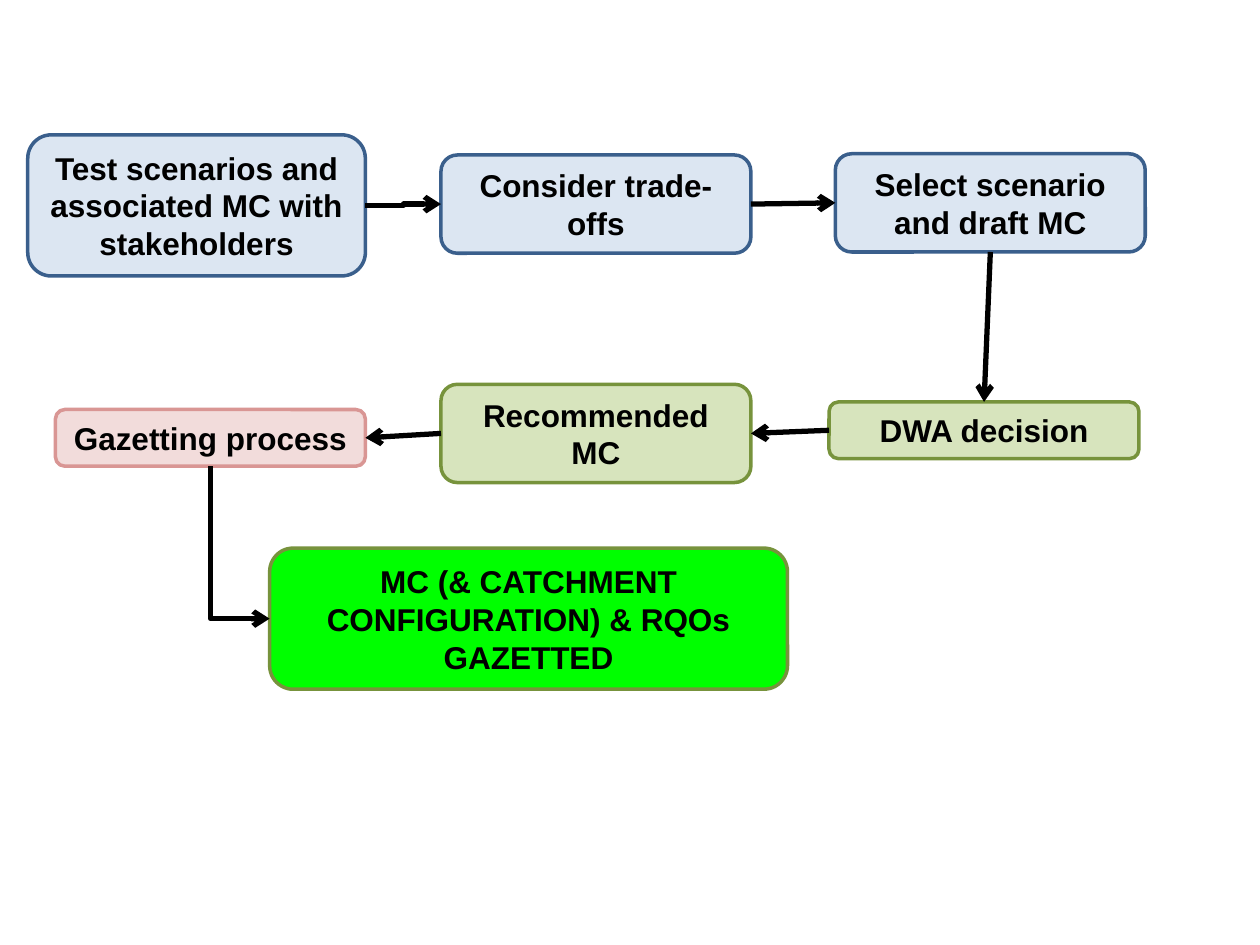
from lxml import etree
from pptx import Presentation
from pptx.dml.color import RGBColor
from pptx.enum.shapes import MSO_CONNECTOR, MSO_SHAPE
from pptx.enum.text import MSO_ANCHOR, MSO_AUTO_SIZE, PP_ALIGN
from pptx.oxml.ns import qn
from pptx.util import Inches, Pt

ROUNDED = MSO_SHAPE.ROUNDED_RECTANGLE
STRAIGHT = MSO_CONNECTOR.STRAIGHT
ELBOW = MSO_CONNECTOR.ELBOW
MIDDLE = MSO_ANCHOR.MIDDLE
CENTER = PP_ALIGN.CENTER
GROW = MSO_AUTO_SIZE.SHAPE_TO_FIT_TEXT
TOP, LEFT, BOTTOM, RIGHT = range(4)

COLORS = {
    "black": "000000",
    "blue": "DCE6F2",
    "blue_line": "3A5F8C",
    "olive": "D7E4BD",
    "olive_line": "77933C",
    "rose": "F2DCDB",
    "rose_line": "D99694",
    "lime": "00FF00",
}

STEPS = {
    "test": ("Test scenarios and associated MC with stakeholders",
             (0.22, 1.07, 2.68, 1.12), "blue", "blue_line"),
    "select": ("Select scenario and draft MC",
               (6.63, 1.22, 2.46, 0.78), "blue", "blue_line"),
    "consider": ("Consider trade-offs",
                 (3.5, 1.23, 2.46, 0.78), "blue", "blue_line"),
    "decision": ("DWA decision",
                 (6.58, 3.19, 2.46, 0.45), "olive", "olive_line"),
    "recommended": ("Recommended MC",
                    (3.5, 3.05, 2.46, 0.78), "olive", "olive_line"),
    "gazetted": ("MC (& CATCHMENT CONFIGURATION) & RQOs GAZETTED",
                 (2.14, 4.35, 4.11, 1.12), "lime", "olive_line"),
    "gazetting": ("Gazetting process",
                  (0.44, 3.25, 2.46, 0.45), "rose", "rose_line"),
}

LINKS = [
    (ELBOW, "test", RIGHT, "consider", LEFT),
    (STRAIGHT, "consider", RIGHT, "select", LEFT),
    (STRAIGHT, "select", BOTTOM, "decision", TOP),
    (STRAIGHT, "decision", LEFT, "recommended", RIGHT),
    (STRAIGHT, "recommended", LEFT, "gazetting", RIGHT),
]


def color(name):
    return RGBColor.from_string(COLORS[name])


def add_step(slide, text, box, fill, line):
    shape = slide.shapes.add_shape(ROUNDED, *map(Inches, box))
    shape.shadow.inherit = False
    shape.fill.solid()
    shape.fill.fore_color.rgb = color(fill)
    shape.line.color.rgb = color(line)
    shape.line.width = Pt(2)
    frame = shape.text_frame
    frame.word_wrap = True
    frame.auto_size = GROW
    frame.vertical_anchor = MIDDLE
    paragraph = frame.paragraphs[0]
    paragraph.text = text
    paragraph.alignment = CENTER
    paragraph.font.name = "Arial"
    paragraph.font.size = Pt(18)
    paragraph.font.bold = True
    paragraph.font.color.rgb = color("black")
    return shape


def style_arrow(connector):
    connector.line.color.rgb = color("black")
    connector.line.width = Pt(3)
    etree.SubElement(connector.line._get_or_add_ln(), qn("a:tailEnd"), type="arrow")
    etree.SubElement(connector._element.spPr, qn("a:effectLst"))


def add_link(slide, kind, source, source_side, target, target_side):
    connector = slide.shapes.add_connector(kind, 0, 0, 0, 0)
    connector.begin_connect(source, source_side)
    connector.end_connect(target, target_side)
    style_arrow(connector)


def add_down_right_link(slide, source, target):
    start_x = source.left + source.width // 2
    start_y = source.top + source.height
    end_x = target.left
    end_y = target.top + target.height // 2
    center_x, center_y = (start_x + end_x) // 2, (start_y + end_y) // 2
    half_length, half_depth = (end_y - start_y) // 2, (end_x - start_x) // 2
    connector = slide.shapes.add_connector(
        ELBOW,
        center_x + half_length, center_y - half_depth,
        center_x - half_length, center_y + half_depth)
    properties = connector._element.spPr
    properties.find(qn("a:xfrm")).set("rot", str(270 * 60000))
    properties.find(qn("a:prstGeom")).set("prst", "bentConnector2")
    style_arrow(connector)


def add_process(slide):
    shapes = {name: add_step(slide, *step) for name, step in STEPS.items()}
    for kind, source, source_side, target, target_side in LINKS:
        add_link(slide, kind, shapes[source], source_side, shapes[target], target_side)
    add_down_right_link(slide, shapes["gazetting"], shapes["gazetted"])


def main():
    presentation = Presentation()
    presentation.slide_width = Inches(10)
    presentation.slide_height = Inches(7.5)
    slide = presentation.slides.add_slide(presentation.slide_layouts[6])
    add_process(slide)
    presentation.save("out.pptx")


if __name__ == "__main__":
    main()
